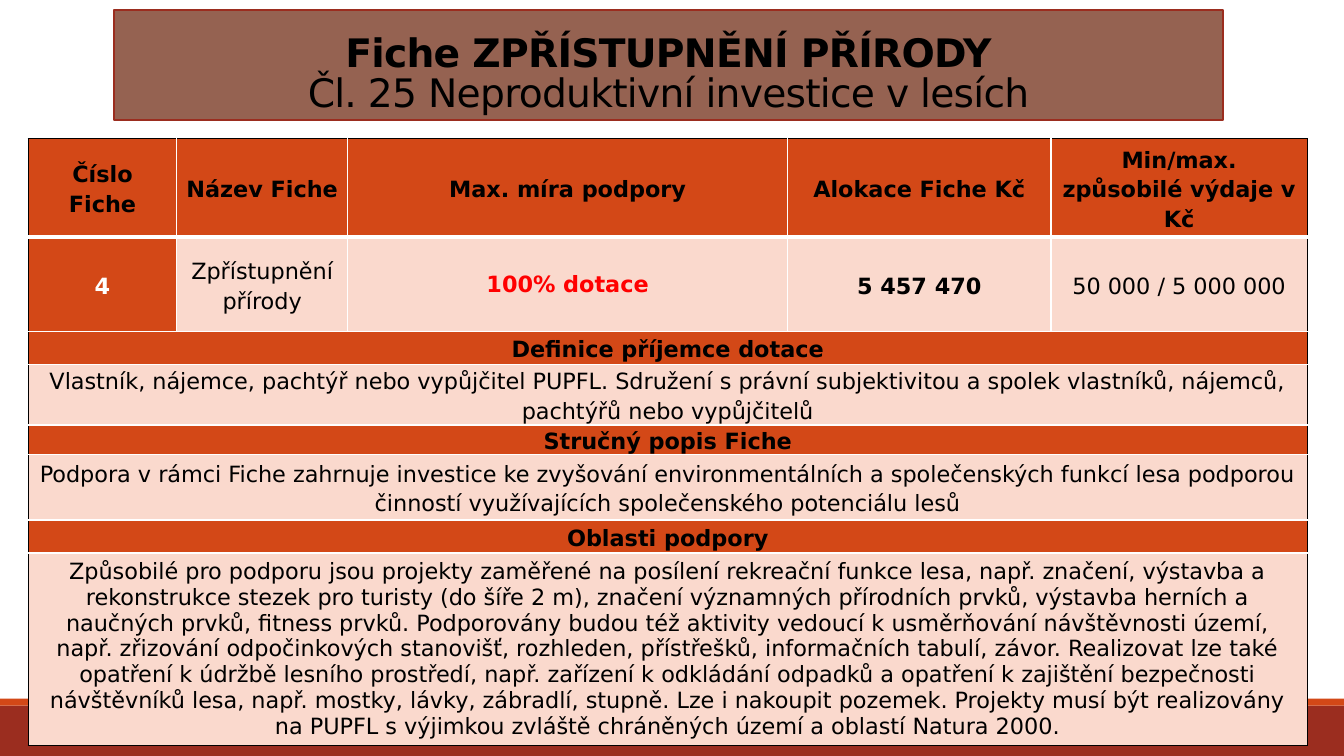
from lxml.etree import SubElement
from pptx import Presentation
from pptx.dml.color import RGBColor
from pptx.enum.shapes import MSO_SHAPE
from pptx.enum.text import MSO_ANCHOR, PP_ALIGN
from pptx.oxml.ns import qn
from pptx.util import Pt

FONT = "DejaVu Sans"
BLACK = RGBColor(0x00, 0x00, 0x00)
WHITE = RGBColor(0xFF, 0xFF, 0xFF)
RED = RGBColor(0xFF, 0x00, 0x00)
ORANGE = RGBColor(0xD3, 0x48, 0x17)
BRICK = RGBColor(0x9B, 0x2D, 0x1F)
BROWN = RGBColor(0x95, 0x62, 0x51)
PEACH = RGBColor(0xFA, 0xD9, 0xCD)

COL_WIDTHS = [106, 122.2, 314.2, 188.2, 183]
ROW_HEIGHTS = [70.3, 67.5, 23.6, 43, 21, 46.6, 23.6, 137.5]

HEADERS = ["Číslo Fiche", "Název Fiche", "Max. míra podpory",
           "Alokace Fiche Kč", "Min/max. způsobilé výdaje v Kč"]
# text, fill, font format, line spacing
VALUES = [
    ("4", ORANGE, WHITE, True, 1.15),
    ("Zpřístupnění přírody", PEACH, BLACK, False, 1.15),
    ("100% dotace", PEACH, RED, True, 1),
    ("5 457 470", PEACH, BLACK, True, 1.15),
    ("50 000 / 5 000 000", PEACH, BLACK, False, 1.15),
]
SECTIONS = [
    ("Definice příjemce dotace",
     "Vlastník, nájemce, pachtýř nebo vypůjčitel PUPFL. Sdružení s právní "
     "subjektivitou a spolek vlastníků, nájemců, pachtýřů nebo vypůjčitelů", 1.15),
    ("Stručný popis Fiche",
     "Podpora v rámci Fiche zahrnuje investice ke zvyšování environmentálních "
     "a společenských funkcí lesa podporou činností využívajících "
     "společenského potenciálu lesů", 1.15),
    ("Oblasti podpory",
     "Způsobilé pro podporu jsou projekty zaměřené na posílení rekreační funkce "
     "lesa, např. značení, výstavba a rekonstrukce stezek pro turisty (do šíře "
     "2 m), značení významných přírodních prvků, výstavba herních a naučných "
     "prvků, fitness prvků. Podporovány budou též aktivity vedoucí k usměrňování "
     "návštěvnosti území, např. zřizování odpočinkových stanovišť, rozhleden, "
     "přístřešků, informačních tabulí, závor. Realizovat lze také opatření "
     "k údržbě lesního prostředí, např. zařízení k odkládání odpadků a opatření "
     "k zajištění bezpečnosti návštěvníků lesa, např. mostky, lávky, zábradlí, "
     "stupně. Lze i nakoupit pozemek. Projekty musí být realizovány na PUPFL "
     "s výjimkou zvláště chráněných území a oblastí Natura 2000.", 1),
]


def set_format(target, formats):
    for name, value in formats.items():
        setattr(target, name, value)


def add_text(p, text, size, color, bold):
    r = p.add_run()
    r.text = text
    set_format(r.font, {"name": FONT, "size": Pt(size), "bold": bold})
    r.font.color.rgb = color
    return r


def add_box(s, left, top, width, height, fill, line=None):
    sp = s.shapes.add_shape(MSO_SHAPE.RECTANGLE,
                            Pt(left), Pt(top), Pt(width), Pt(height))
    sp.shadow.inherit = False
    sp.fill.solid()
    sp.fill.fore_color.rgb = fill
    if line is None:
        sp.line.fill.background()
    else:
        sp.line.color.rgb = line
        sp.line.width = Pt(1.25)
    return sp


def add_footer_bands(s, left, top, width, height):
    stripe = 5
    add_box(s, left, top + stripe, width, height - stripe, BRICK)
    add_box(s, left, top, width, stripe, ORANGE)


def add_title(s, left, top, width, height):
    sp = add_box(s, left, top, width, height, BROWN, BRICK)
    tf = sp.text_frame
    set_format(tf, {"word_wrap": True, "vertical_anchor": MSO_ANCHOR.BOTTOM})
    p = tf.paragraphs[0]
    set_format(p, {"alignment": PP_ALIGN.CENTER, "line_spacing": 0.85})
    first = add_text(p, "Fiche ZPŘÍSTUPNĚNÍ PŘÍRODY", 28, BLACK, True)
    p.add_line_break()
    second = add_text(p, "Čl. 25 Neproduktivní investice v lesích", 28, BLACK, False)
    for r in (first, second):
        r.font._element.set("spc", "-50")


def set_borders(cell, borders):
    """Give the cell its (colour, width) borders in the order left, right, top, bottom."""
    tc_pr = cell._tc.get_or_add_tcPr()
    for i, (side, (color, width)) in enumerate(zip("LRTB", borders)):
        ln = tc_pr.makeelement(qn(f"a:ln{side}"), {"w": str(Pt(width))})
        fill = SubElement(ln, qn("a:solidFill"))
        SubElement(fill, qn("a:srgbClr"), val=str(color))
        tc_pr.insert(i, ln)


def fill_cell(cell, text, fill, color, bold, spacing):
    set_format(cell, {"margin_left": Pt(5), "margin_right": Pt(5),
                      "margin_top": 0, "margin_bottom": 0,
                      "vertical_anchor": MSO_ANCHOR.MIDDLE})
    cell.fill.solid()
    cell.fill.fore_color.rgb = fill
    p = cell.text_frame.paragraphs[0]
    set_format(p, {"alignment": PP_ALIGN.CENTER, "line_spacing": spacing})
    add_text(p, text, 16, color, bold)


def add_fiche_table(s, left, top):
    rows = [[(text, ORANGE, BLACK, True, 1.15) for text in HEADERS], VALUES]
    for heading, body, spacing in SECTIONS:
        rows.append([(heading, ORANGE, BLACK, True, 1.15)])
        rows.append([(body, PEACH, BLACK, False, spacing)])

    last_row, last_col = len(rows) - 1, len(COL_WIDTHS) - 1
    table = s.shapes.add_table(len(rows), len(COL_WIDTHS), Pt(left), Pt(top),
                               Pt(sum(COL_WIDTHS)), Pt(sum(ROW_HEIGHTS))).table
    set_format(table, {"first_row": False, "horz_banding": False})
    for column, width in zip(table.columns, COL_WIDTHS):
        column.width = Pt(width)
    for row, height in zip(table.rows, ROW_HEIGHTS):
        row.height = Pt(height)

    for i, row in enumerate(rows):
        merged = len(row) == 1
        if merged:
            table.cell(i, 0).merge(table.cell(i, last_col))
        for j, content in enumerate(row):
            cell = table.cell(i, j)
            fill_cell(cell, *content)
            set_borders(cell, [
                (BLACK if j == 0 else WHITE, 1),
                (BLACK if merged or j == last_col else WHITE, 1),
                (BLACK if i == 0 else WHITE, 3 if i == 1 else 1),
                (BLACK if i == last_row else WHITE, 3 if i == 0 else 1),
            ])


def main():
    prs = Presentation()
    set_format(prs, {"slide_width": Pt(960), "slide_height": Pt(540)})
    s = prs.slides.add_slide(prs.slide_layouts[6])
    add_footer_bands(s, 0, 499, 960, 41)
    add_title(s, 81.4, 7.2, 792, 78.7)
    add_fiche_table(s, 20.2, 99.2)
    prs.save("out.pptx")


if __name__ == "__main__":
    main()
